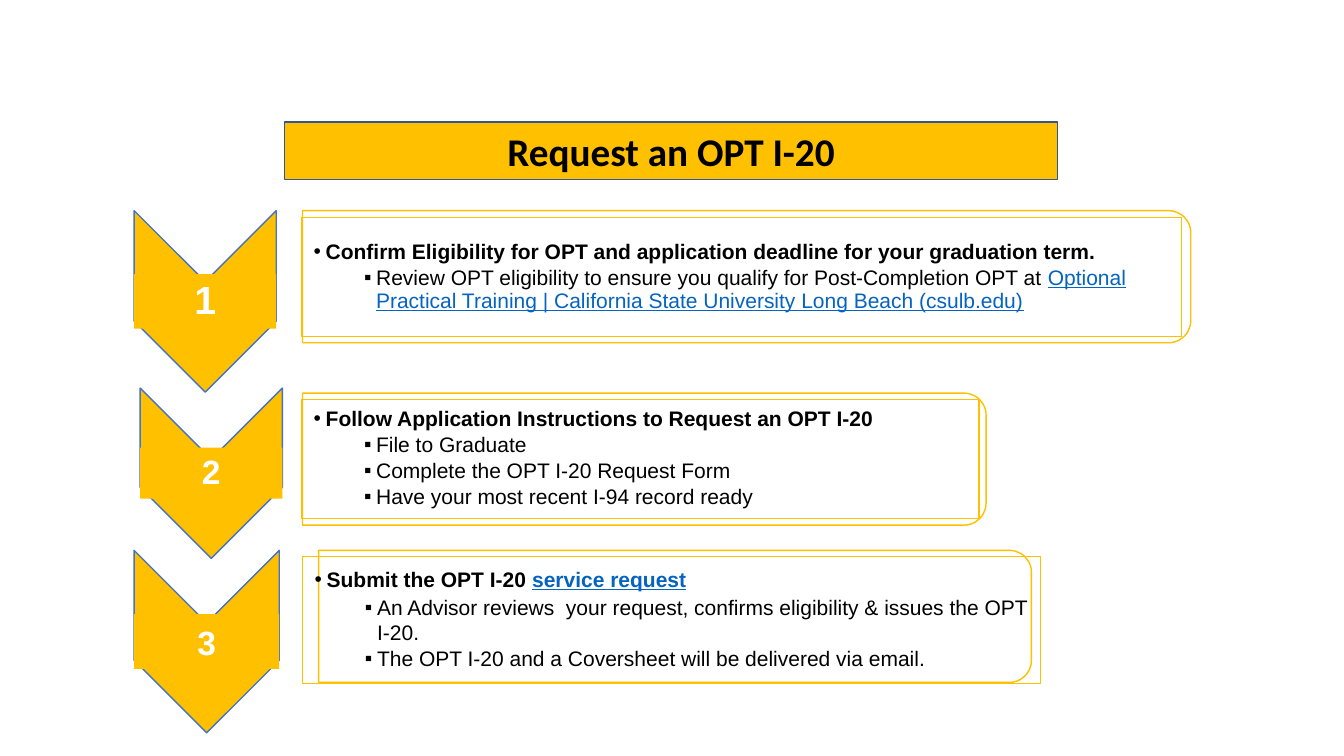
from dataclasses import dataclass

from lxml.etree import SubElement
from pptx import Presentation
from pptx.dml.color import RGBColor
from pptx.enum.shapes import MSO_SHAPE as Preset
from pptx.enum.text import MSO_ANCHOR as Anchor, MSO_AUTO_SIZE as AutoSize, PP_ALIGN as Align
from pptx.oxml.ns import qn
from pptx.util import Pt

EMU_PER_PX = 9144  # 100 px to the inch
COMPARISON_LAYOUT = 4  # a title and four bodies


@dataclass(frozen=True)
class Theme:
    gold: str = "FFC000"
    white: str = "FFFFFF"
    black: str = "000000"
    link: str = "0563C1"
    chevron_line: str = "4472C4"
    title_line: str = "325491"
    title_font: str = "Calibri"
    body_font: str = "Arial"
    title_size: int = 28
    body_size: int = 15


THEME = Theme()
TITLE = "Request an OPT I-20"
TITLE_FRAME = (282, 121, 767, 57)

# Frames are left, top, width, height; a line is (level, line spacing, text, linked text).
STEPS = [
    {
        "number": "1", "size": 28, "spacing": 0.9,
        "chevron": (133, 209, 141, 180),
        "panel": (300, 209, 881, 131),
        "body": (299, 216, 873, 118),
        "lines": [
            (0, 0.9, "Confirm Eligibility for OPT and application deadline for your graduation term.", ""),
            (1, 0.9, "Review OPT eligibility to ensure you qualify for Post-Completion OPT at ",
             "Optional Practical Training | California State University Long Beach (csulb.edu)"),
        ],
    },
    {
        "number": "2", "size": 24, "spacing": 0.9,
        "chevron": (139, 385, 141, 169),
        "panel": (300, 390, 678, 131),
        "body": (299, 396, 672, 118),
        "lines": [
            (0, 0.9, "Follow Application Instructions to Request an OPT I-20", ""),
            (1, 0.9, "File to Graduate", ""),
            (1, 0.9, "Complete the OPT I-20 Request Form", ""),
            (1, 0.9, "Have your most recent I-94 record ready", ""),
        ],
    },
    {
        "number": "3", "size": 24, "spacing": 1.0,
        "chevron": (133, 546, 144, 181),
        "panel": (316, 546, 707, 131),
        "body": (300, 552, 732, 126),
        "lines": [
            (0, 0.9, "Submit the OPT I-20 ", "service request"),
            (1, 1.0, "An Advisor reviews  your request, confirms eligibility & issues the OPT I-20.", ""),
            (1, 0.9, "The OPT I-20 and a Coversheet will be delivered via email.", ""),
        ],
    },
]
BULLETS = "•▪"
INDENTS = (12, 62)
HANGING = 12
BODY_INSETS = (12, 1, 1, 1)
BADGE_INSETS = (2, 2, 2, 2)


def px(length):
    return round(length * EMU_PER_PX)


def place(shape, frame):
    shape.left, shape.top, shape.width, shape.height = map(px, frame)


def paint(shape, fill=None, line=None, width=1):
    if fill:
        shape.fill.solid()
        shape.fill.fore_color.rgb = RGBColor.from_string(fill)
    else:
        shape.fill.background()
    if line:
        shape.line.color.rgb = RGBColor.from_string(line)
        shape.line.width = Pt(width)
    else:
        shape.line.fill.background()


def add_preset(slide, preset, frame, turned=False, **colors):
    """Add a shape that covers frame; turned ones are rotated a quarter to the right."""
    left, top, width, height = frame
    if turned:
        shift = (width - height) / 2
        frame = (left + shift, top - shift, height, width)
    shape = slide.shapes.add_shape(preset, *map(px, frame))
    shape.rotation = 90 if turned else 0
    shape.shadow.inherit = False
    paint(shape, **colors)
    return shape


def prepare_frame(shape, insets):
    frame = shape.text_frame
    frame.word_wrap = True
    frame.auto_size = AutoSize.NONE
    frame.vertical_anchor = Anchor.MIDDLE
    frame.margin_left, frame.margin_top, frame.margin_right, frame.margin_bottom = map(px, insets)
    return frame


def add_text(paragraph, text, size=THEME.body_size, font=THEME.body_font,
             color=THEME.black, bold=False, underline=False):
    run = paragraph.add_run()
    run.text = text
    run.font.size = Pt(size)
    run.font.name = font
    run.font.color.rgb = RGBColor.from_string(color)
    run.font.bold = bold
    run.font.underline = underline


def format_paragraph(paragraph, align, spacing=1.0, after=0):
    paragraph.alignment = align
    paragraph.line_spacing = spacing
    paragraph.space_before = Pt(0)
    paragraph.space_after = Pt(after)


def add_bullet(paragraph, level):
    paragraph.level = level
    properties = paragraph._p.get_or_add_pPr()
    properties.set("marL", str(px(INDENTS[level])))
    properties.set("indent", str(-px(HANGING)))
    SubElement(properties, qn("a:buFont")).set("typeface", THEME.body_font)
    SubElement(properties, qn("a:buChar")).set("char", BULLETS[level])


def fill_title(title):
    place(title, TITLE_FRAME)
    paint(title, fill=THEME.gold, line=THEME.title_line)
    paragraph = prepare_frame(title, (10, 5, 10, 5)).paragraphs[0]
    format_paragraph(paragraph, Align.CENTER)
    add_text(paragraph, TITLE, size=THEME.title_size, font=THEME.title_font, bold=True)


def add_panel(slide, step, body):
    panel = add_preset(slide, Preset.ROUND_2_SAME_RECTANGLE, step["panel"], turned=True,
                       fill=THEME.white, line=THEME.gold)
    color = panel._element.spPr.find(qn("a:solidFill"))[0]
    SubElement(color, qn("a:alpha")).set("val", "90000")

    slide.shapes._spTree.append(body._element)  # bring the list in front of its panel
    place(body, step["body"])
    paint(body, line=THEME.gold, width=0.75)
    frame = prepare_frame(body, BODY_INSETS)
    for index, (level, spacing, text, linked) in enumerate(step["lines"]):
        paragraph = frame.add_paragraph() if index else frame.paragraphs[0]
        add_bullet(paragraph, level)
        format_paragraph(paragraph, Align.LEFT, spacing, after=2.25)
        add_text(paragraph, text, bold=level == 0)
        if linked:
            add_text(paragraph, linked, color=THEME.link, bold=level == 0, underline=True)


def add_number(slide, step):
    left, top, width, height = step["chevron"]
    add_preset(slide, Preset.CHEVRON, step["chevron"], turned=True,
               fill=THEME.gold, line=THEME.chevron_line)
    badge = add_preset(slide, Preset.RECTANGLE,
                       (left, top + 0.35 * height, width, 0.3 * height), fill=THEME.gold)
    paragraph = prepare_frame(badge, BADGE_INSETS).paragraphs[0]
    format_paragraph(paragraph, Align.CENTER, step["spacing"])
    add_text(paragraph, step["number"], size=step["size"], color=THEME.white, bold=True)


def main():
    presentation = Presentation()
    presentation.slide_width, presentation.slide_height = px(1333), px(750)
    slide = presentation.slides.add_slide(presentation.slide_layouts[COMPARISON_LAYOUT])
    title, *bodies = slide.placeholders
    fill_title(title)
    for step, body in zip(STEPS, bodies):
        add_panel(slide, step, body)
        add_number(slide, step)
    for unused in bodies[len(STEPS):]:
        unused._element.getparent().remove(unused._element)
    presentation.save("out.pptx")


if __name__ == "__main__":
    main()
